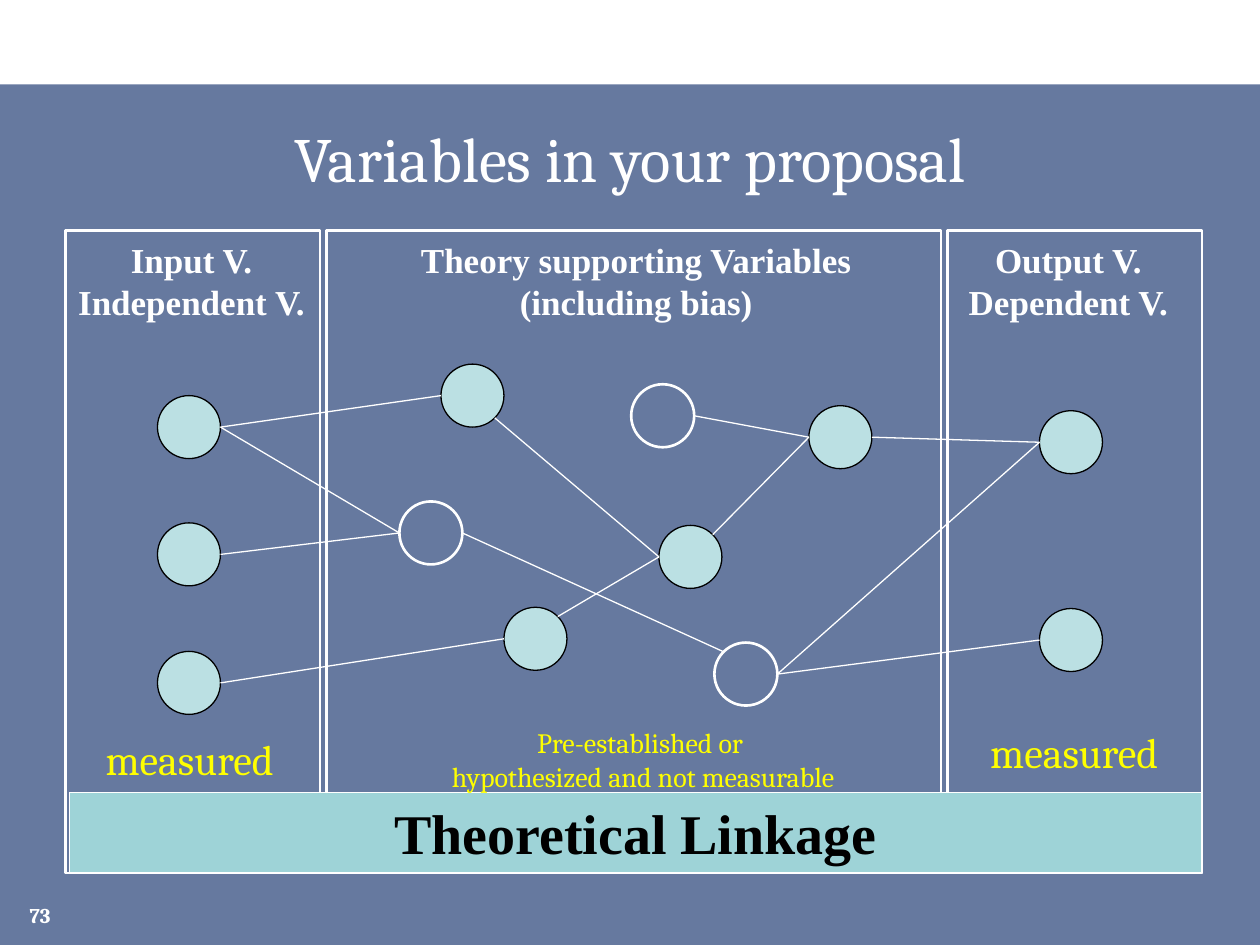
"""Build the slide that links input, theory and output variables."""
from math import cos, radians, sin
from typing import NamedTuple

from lxml import etree
from pptx import Presentation
from pptx.dml.color import RGBColor
from pptx.enum import shapes, text
from pptx.oxml import ns
from pptx.util import Inches, Pt

WHITE = RGBColor(0xFF, 0xFF, 0xFF)
BLACK = RGBColor(0x00, 0x00, 0x00)
YELLOW = RGBColor(0xFF, 0xFF, 0x00)
NAVY = RGBColor(0x00, 0x20, 0x60)
TEAL = RGBColor(0x9E, 0xD3, 0xD7)
PALE_TEAL = RGBColor(0xBB, 0xE0, 0xE3)
SERIF = "Times New Roman"
DIAMETER = 0.5
ANGLES = {"right": 0, "lower right": 45, "left": 180, "upper left": 225, "upper right": 315}


class Box(NamedTuple):
    left: float
    top: float
    width: float
    height: float


class Node(NamedTuple):
    left: float
    top: float
    measured: bool = True


class Link(NamedTuple):
    start: str
    end: str
    start_side: str = "right"
    end_side: str = "left"


class Label(NamedTuple):
    box: Box
    lines: list[str]
    size: int


PANELS = [Box(0.52, 1.83, 2.02, 5.1), Box(7.52, 1.83, 2.02, 5.1), Box(2.59, 1.83, 4.88, 5.1)]
HEADERS = [
    Label(Box(0.51, 1.84, 2.02, 0.77), ["Input V.", "Independent V."], 20),
    Label(Box(7.58, 1.84, 1.8, 0.77), ["Output V.", "Dependent V."], 20),
    Label(Box(3.23, 1.84, 3.64, 0.77), ["Theory supporting Variables", "(including bias)"], 20),
]
NOTES = [
    Label(Box(0.73, 5.77, 1.55, 0.61), ["measured"], 24),
    Label(Box(7.75, 5.72, 1.55, 0.61), ["measured"], 24),
    Label(Box(2.32, 5.71, 5.57, 0.61),
          ["Pre-established or ", "hypothesized and not measurable"], 16),
]
NODES = {
    "input 1": Node(1.25, 3.14),
    "input 2": Node(1.25, 4.15),
    "input 3": Node(1.25, 5.17),
    "output 1": Node(8.25, 3.26),
    "output 2": Node(8.25, 4.83),
    "theory top": Node(3.5, 2.89),
    "theory centre": Node(5.23, 4.17),
    "theory bottom": Node(4, 4.82),
    "bias top": Node(5.01, 3.05, False),
    "bias left": Node(3.17, 3.98, False),
    "bias bottom": Node(5.67, 5.1, False),
    "theory right": Node(6.42, 3.22),
}
LINKS = [
    Link("input 1", "theory top"),
    Link("input 1", "bias left"),
    Link("input 2", "bias left"),
    Link("input 3", "theory bottom"),
    Link("theory top", "theory centre", "lower right"),
    Link("theory bottom", "theory centre", "upper right"),
    Link("bias top", "theory right"),
    Link("theory centre", "theory right", "upper right"),
    Link("bias left", "bias bottom", end_side="upper left"),
    Link("bias bottom", "output 2"),
    Link("bias bottom", "output 1"),
    Link("theory right", "output 1"),
]


def write(shape, *lines: str, size: int, color=WHITE, font="Cambria", bold=False,
          align=text.PP_ALIGN.CENTER, anchor=text.MSO_ANCHOR.TOP, wrap=True) -> None:
    """Fill a shape with formatted paragraphs."""
    frame = shape.text_frame
    frame.word_wrap = wrap
    frame.vertical_anchor = anchor
    frame.text = "\n".join(lines)
    for paragraph in frame.paragraphs:
        paragraph.alignment = align
        paragraph.font.size = Pt(size)
        paragraph.font.name = font
        paragraph.font.bold = bold
        paragraph.font.color.rgb = color


def place(shape, box: Box) -> None:
    """Move and size a shape."""
    shape.left, shape.top, shape.width, shape.height = map(Inches, box)


def add_text(slide, box: Box, *lines: str, **style):
    """Add a text box."""
    shape = slide.shapes.add_textbox(*map(Inches, box))
    write(shape, *lines, **style)
    return shape


def add_shape(slide, kind, box: Box, fill=None, line=None, width=0.75):
    """Add a preset shape with optional fill and outline."""
    shape = slide.shapes.add_shape(kind, *map(Inches, box))
    shape.shadow.inherit = False
    if fill is None:
        shape.fill.background()
    else:
        shape.fill.solid()
        shape.fill.fore_color.rgb = fill
    if line is None:
        shape.line.fill.background()
    else:
        shape.line.color.rgb = line
        shape.line.width = Pt(width)
    return shape


def rim_point(node: Node, side: str) -> tuple[int, int]:
    """Return the point on a node's rim at the given side."""
    angle, radius = radians(ANGLES[side]), DIAMETER / 2
    return (Inches(node.left + radius + radius * cos(angle)),
            Inches(node.top + radius + radius * sin(angle)))


def add_link(slide, link: Link) -> None:
    """Draw a line between two nodes."""
    connector = slide.shapes.add_connector(
        shapes.MSO_CONNECTOR.STRAIGHT,
        *rim_point(NODES[link.start], link.start_side),
        *rim_point(NODES[link.end], link.end_side))
    connector.line.color.rgb = WHITE
    connector.line.width = Pt(0.75)
    etree.SubElement(connector._element.spPr, ns.qn("a:effectLst"))


def add_backdrop(slide) -> None:
    """Put a translucent navy field behind everything else."""
    backdrop = add_shape(slide, shapes.MSO_SHAPE.RECTANGLE, Box(0, 0.67, 10, 6.83), NAVY)
    color = backdrop._element.spPr.find(".//" + ns.qn("a:srgbClr"))
    etree.SubElement(color, ns.qn("a:alpha"), val="60000")
    slide.shapes._spTree.insert(2, backdrop._element)


def main() -> None:
    """Build and save the presentation."""
    presentation = Presentation()
    presentation.slide_width, presentation.slide_height = Inches(10), Inches(7.5)
    slide = presentation.slides.add_slide(presentation.slide_layouts[5])
    add_backdrop(slide)
    title = slide.shapes.title
    place(title, Box(0.25, 0.83, 9.5, 0.83))
    write(title, "Variables in your proposal", size=36, anchor=text.MSO_ANCHOR.MIDDLE)
    add_text(slide, Box(0.02, 7.06, 0.48, 0.4), "73", size=12, bold=True,
             align=text.PP_ALIGN.RIGHT, anchor=text.MSO_ANCHOR.MIDDLE)
    for panel in PANELS:
        add_shape(slide, shapes.MSO_SHAPE.RECTANGLE, panel, line=WHITE, width=1.5)
    for header in HEADERS:
        add_text(slide, header.box, *header.lines, size=header.size,
                 font=SERIF, bold=True, wrap=False)
    bar = add_shape(slide, shapes.MSO_SHAPE.RECTANGLE, Box(0.55, 6.29, 8.99, 0.64), TEAL, WHITE)
    write(bar, "Theoretical Linkage", size=32, color=BLACK, font=SERIF, bold=True)
    for node in NODES.values():
        box = Box(node.left, node.top, DIAMETER, DIAMETER)
        if node.measured:
            add_shape(slide, shapes.MSO_SHAPE.OVAL, box, PALE_TEAL, BLACK)
        else:
            add_shape(slide, shapes.MSO_SHAPE.OVAL, box, line=WHITE, width=1.5)
    for link in LINKS:
        add_link(slide, link)
    for note in NOTES:
        add_text(slide, note.box, *note.lines, size=note.size, color=YELLOW)
    presentation.save("out.pptx")


if __name__ == "__main__":
    main()
